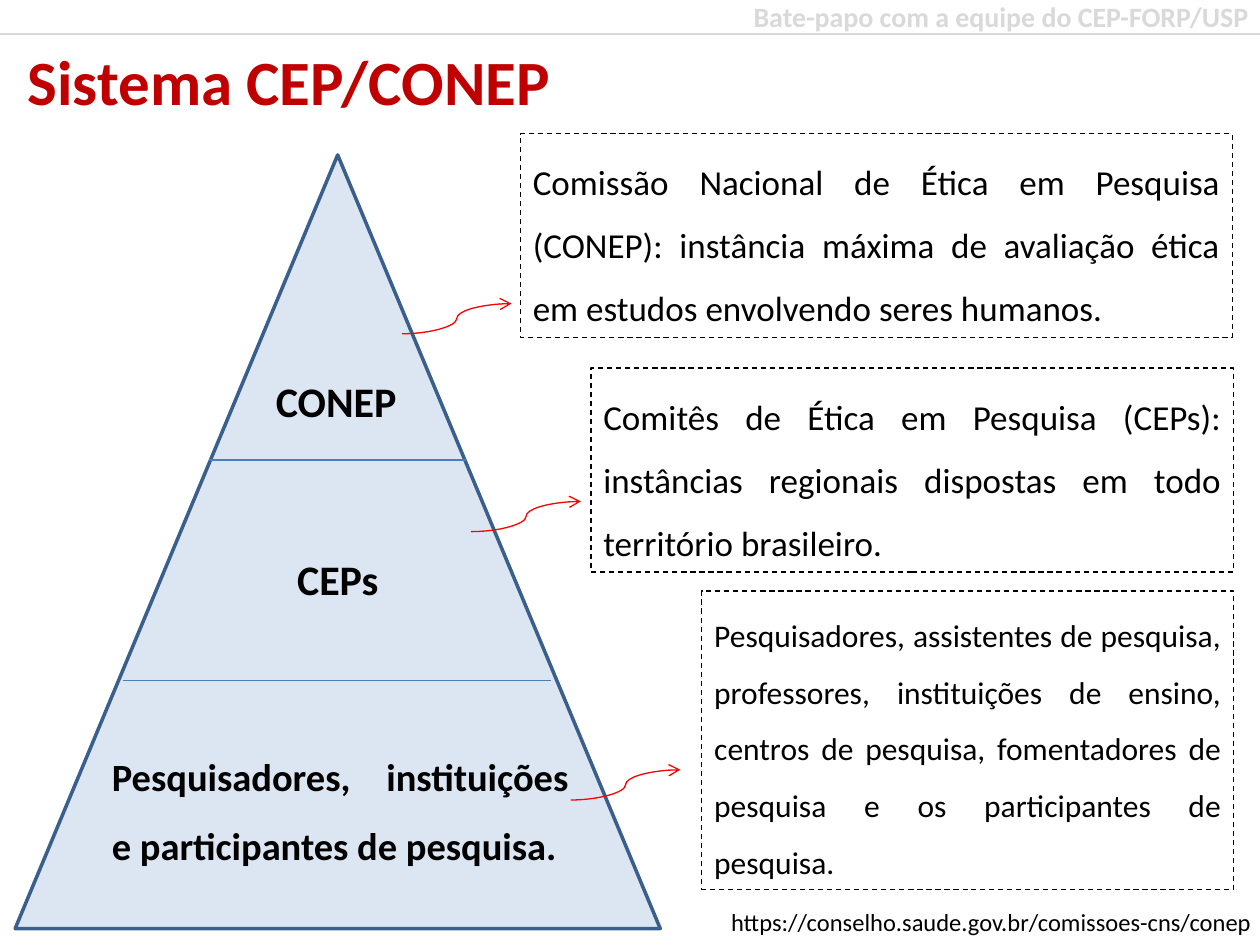
from dataclasses import dataclass

from lxml.etree import SubElement
from pptx import Presentation
from pptx.dml.color import RGBColor
from pptx.enum.dml import MSO_LINE
from pptx.enum.shapes import MSO_CONNECTOR, MSO_SHAPE
from pptx.enum.text import MSO_ANCHOR, MSO_AUTO_SIZE, PP_ALIGN
from pptx.oxml.ns import qn
from pptx.util import Inches, Pt


@dataclass(frozen=True)
class Theme:
    font: str = "Calibri"
    ink: str = "000000"
    pale: str = "D9D9D9"
    title: str = "C00000"
    fill: str = "DCE6F2"
    edge: str = "3A5F8C"
    rule: str = "4B7EBC"
    arrow: str = "FF0000"
    head: int = 36
    label: int = 24
    base: int = 22
    note: int = 20
    small: int = 18
    band: int = 16
    link: int = 14
    thin: float = 0.75
    thick: float = 2


class Deck:
    def __init__(self, theme):
        self.theme = theme
        self.prs = Presentation()
        self.prs.slide_width = Inches(10)
        self.prs.slide_height = Inches(7.5)
        self.slide = self.prs.slides.add_slide(self.prs.slide_layouts[5])
        self.shapes = self.slide.shapes

    def style(self, shape, text, size, color, bold, align, space=1.0, wrap=True):
        frame = shape.text_frame
        frame.text = text
        frame.word_wrap = wrap
        frame.auto_size = MSO_AUTO_SIZE.SHAPE_TO_FIT_TEXT
        frame.vertical_anchor = MSO_ANCHOR.TOP
        par = frame.paragraphs[0]
        par.alignment = align
        par.line_spacing = space
        font = par.runs[0].font
        font.name = self.theme.font
        font.size = Pt(size)
        font.bold = bold
        font.color.rgb = RGBColor.from_string(color)

    def title(self, box, text):
        shape = self.shapes.title
        shape.left, shape.top, shape.width, shape.height = map(Inches, box)
        self.style(shape, text, self.theme.head, self.theme.title, True, PP_ALIGN.LEFT)

    def text(self, box, text, size, color=None, bold=False,
             align=PP_ALIGN.JUSTIFY, space=1.5, wrap=True):
        shape = self.shapes.add_textbox(*map(Inches, box))
        self.style(shape, text, size, color or self.theme.ink, bold, align, space, wrap)
        return shape

    def note(self, box, text, size):
        line = self.text(box, text, size).line
        line.color.rgb = RGBColor.from_string(self.theme.ink)
        line.width = Pt(self.theme.thin)
        line.dash_style = MSO_LINE.DASH

    def peak(self, box):
        shape = self.shapes.add_shape(MSO_SHAPE.ISOSCELES_TRIANGLE, *map(Inches, box))
        shape.shadow.inherit = False
        shape.fill.solid()
        shape.fill.fore_color.rgb = RGBColor.from_string(self.theme.fill)
        shape.line.color.rgb = RGBColor.from_string(self.theme.edge)
        shape.line.width = Pt(self.theme.thick)

    def line(self, start, end, color, kind=MSO_CONNECTOR.STRAIGHT):
        link = self.shapes.add_connector(kind, *map(Inches, (*start, *end)))
        link.line.color.rgb = RGBColor.from_string(color)
        link.line.width = Pt(self.theme.thin)
        SubElement(link._element.spPr, qn("a:effectLst"))
        return link

    def arrow(self, left, top):
        link = self.line((left, top), (left + 0.87, top - 0.24),
                         self.theme.arrow, MSO_CONNECTOR.CURVE)
        SubElement(link._element.spPr.find(qn("a:ln")), qn("a:tailEnd"), type="arrow")

    def save(self):
        self.prs.save("out.pptx")


def main():
    theme = Theme()
    deck = Deck(theme)

    deck.line((0, 0.27), (10, 0.27), theme.pale)
    deck.text((5.85, -0.05, 4.19, 0.37), "Bate-papo com a equipe do CEP-FORP/USP",
              theme.band, theme.pale, True, PP_ALIGN.CENTER, 1.0, False)
    deck.title((0.12, 0.29, 4.57, 0.71), "Sistema CEP/CONEP")

    deck.peak((0.12, 1.23, 5.12, 6.14))
    for left, right, top in ((0.98, 4.37, 5.4), (1.66, 3.7, 3.65)):
        deck.line((left, top), (right, top), theme.rule)

    notes = (
        ((4.13, 1.06, 5.65, 1.62), theme.note,
         "Comissão Nacional de Ética em Pesquisa (CONEP): instância máxima "
         "de avaliação ética em estudos envolvendo seres humanos."),
        ((4.69, 2.92, 5.1, 1.62), theme.note,
         "Comitês de Ética em Pesquisa (CEPs): instâncias regionais "
         "dispostas em todo território brasileiro."),
        ((5.57, 4.69, 4.22, 2.37), theme.small,
         "Pesquisadores, assistentes de pesquisa, professores, instituições "
         "de ensino, centros de pesquisa, fomentadores de pesquisa e os "
         "participantes de pesquisa."),
    )
    for box, size, text in notes:
        deck.note(box, text, size)

    levels = (
        ((2.09, 2.73, 1.18, 0.64), "CONEP", theme.label, PP_ALIGN.JUSTIFY),
        ((2.09, 4.14, 1.18, 0.64), "CEPs", theme.label, PP_ALIGN.CENTER),
        ((0.79, 5.74, 3.82, 1.21),
         "Pesquisadores, instituições e participantes de pesquisa.",
         theme.base, PP_ALIGN.JUSTIFY),
    )
    for box, text, size, align in levels:
        deck.text(box, text, size, bold=True, align=align)

    for left, top in ((3.19, 2.65), (3.74, 4.22), (4.53, 6.35)):
        deck.arrow(left, top)

    deck.text((5.42, 7.15, 4.61, 0.34),
              "https://conselho.saude.gov.br/comissoes-cns/conep",
              theme.link, align=PP_ALIGN.RIGHT, space=1.0)
    deck.save()


if __name__ == "__main__":
    main()
